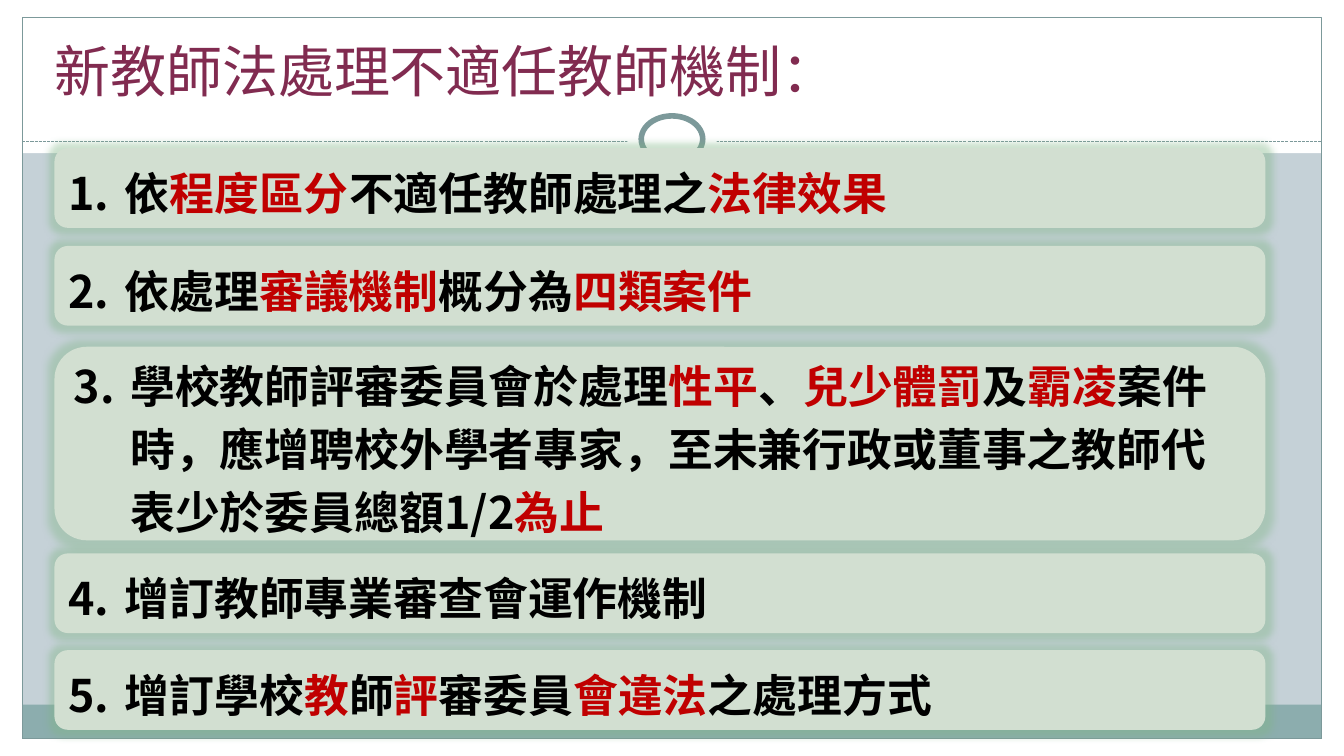
from dataclasses import dataclass

from lxml.etree import SubElement
from pptx import Presentation
from pptx.dml.color import RGBColor as RGB
from pptx.enum.dml import MSO_LINE as DASH
from pptx.enum.shapes import MSO_CONNECTOR as CONN, MSO_SHAPE as SHAPE
from pptx.enum.text import MSO_ANCHOR as ANCHOR, PP_ALIGN as ALIGN
from pptx.oxml.ns import qn
from pptx.util import Pt


@dataclass(frozen=True)
class Theme:
    font: str = "Noto Sans CJK SC"
    title_size: int = 40
    item_size: int = 32
    item_spacing: int = 45
    background: str = "C5D1D7"
    white: str = "FFFFFF"
    footer: str = "8CADAE"
    line: str = "7C999A"
    title: str = "812B50"
    card: str = "D2DFD1"
    glow: str = "7FB585"
    text: str = "000000"
    accent: str = "C00000"


THEME = Theme()
PX = 9144  # 100 px to the inch
WIDTH, HEIGHT = 1333, 750
MARGIN = 22
INDENT = 56

TITLE = "新教師法處理不適任教師機制："

# Top, height and wording of each card; words between asterisks are accented
CARDS = [
    (147, 79, "依*程度區分*不適任教師處理之*法律效果*"),
    (244, 79, "依處理*審議機制*概分為*四類案件*"),
    (344, 192, "學校教師評審委員會於處理*性平*、*兒少體罰*及*霸凌*案件時，"
               "應增聘校外學者專家，至未兼行政或董事之教師代表少於委員總額1/2*為止*"),
    (549, 79, "增訂教師專業審查會運作機制"),
    (645, 79, "增訂學校*教*師*評*審委員*會違法*之處理方式"),
]


def emu(*lengths):
    return [n * PX for n in lengths]


def add_panel(slide, kind, box, fill=None, line=None, weight=0.75):
    sp = slide.shapes.add_shape(kind, *emu(*box))
    sp.shadow.inherit = False
    if fill:
        sp.fill.solid()
        sp.fill.fore_color.rgb = RGB.from_string(fill)
    else:
        sp.fill.background()
    if line:
        sp.line.color.rgb = RGB.from_string(line)
        sp.line.width = Pt(weight)
    else:
        sp.line.fill.background()
    return sp


def set_font(p, size, bold=False):
    """Sets the paragraph font for Latin and East Asian text."""
    p.font.name = THEME.font
    p.font.size = Pt(size)
    p.font.bold = bold
    props = p._p.pPr.find(qn("a:defRPr"))
    SubElement(props, qn("a:ea")).set("typeface", THEME.font)


def set_number(p, number):
    """Gives the paragraph a hanging automatic number."""
    props = p._p.pPr
    props.set("marL", str(INDENT * PX))
    props.set("indent", str(-INDENT * PX))
    bullet = SubElement(props, qn("a:buAutoNum"))
    bullet.set("type", "arabicPeriod")
    bullet.set("startAt", str(number))
    props.find(qn("a:defRPr")).addprevious(bullet)


def add_glow(sp):
    effects = next(sp._element.iter(qn("a:effectLst")))
    glow = SubElement(effects, qn("a:glow"))
    glow.set("rad", str(Pt(10)))
    color = SubElement(glow, qn("a:srgbClr"))
    color.set("val", THEME.glow)
    SubElement(color, qn("a:alpha")).set("val", "40000")


def add_frame(slide, box):
    x, y, w, h = box
    right, bottom = x + w, y + h
    # White margins and header
    for margin in [
        (0, bottom, WIDTH, HEIGHT - bottom),
        (0, 0, WIDTH, 152),
        (0, 0, x, HEIGHT),
        (right, 0, WIDTH - right, HEIGHT),
    ]:
        add_panel(slide, SHAPE.RECTANGLE, margin, THEME.white)
    # Footer band and outline
    add_panel(slide, SHAPE.RECTANGLE, (x, bottom - 34, w, 34), THEME.footer)
    add_panel(slide, SHAPE.RECTANGLE, box, line=THEME.line)
    # Dashed divider
    rule_y = y + 123
    rule = slide.shapes.add_connector(
        CONN.STRAIGHT, *emu(x, rule_y, right, rule_y))
    rule.line.color.rgb = RGB.from_string(THEME.line)
    rule.line.width = Pt(0.75)
    rule.line.dash_style = DASH.SQUARE_DOT
    SubElement(rule._element.spPr, qn("a:effectLst"))
    # Ring on the divider
    left = x + w // 2 - 44
    add_panel(slide, SHAPE.OVAL, (left, y + 88, 89, 67), THEME.white)
    add_panel(slide, SHAPE.OVAL, (left + 14, y + 98, 61, 46),
              THEME.white, THEME.line, 4)


def add_title(slide, box):
    tf = slide.shapes.add_textbox(*emu(*box)).text_frame
    tf.word_wrap = True
    tf.vertical_anchor = ANCHOR.BOTTOM
    p = tf.paragraphs[0]
    p.text = TITLE
    p.font.color.rgb = RGB.from_string(THEME.title)
    set_font(p, THEME.title_size)


def add_card(slide, box, number, wording):
    sp = add_panel(slide, SHAPE.ROUNDED_RECTANGLE, box, THEME.card)
    add_glow(sp)
    tf = sp.text_frame
    tf.word_wrap = True
    tf.vertical_anchor = ANCHOR.MIDDLE
    p = tf.paragraphs[0]
    p.alignment = ALIGN.LEFT
    p.line_spacing = Pt(THEME.item_spacing)
    set_font(p, THEME.item_size, bold=True)
    set_number(p, number)
    for i, part in enumerate(wording.split("*")):
        if part:
            r = p.add_run()
            r.text = part
            r.font.color.rgb = RGB.from_string(
                THEME.accent if i % 2 else THEME.text)


def build_slide(prs):
    slide = prs.slides.add_slide(prs.slide_layouts[6])
    slide.background.fill.solid()
    slide.background.fill.fore_color.rgb = RGB.from_string(THEME.background)
    add_frame(slide, (MARGIN, 17, WIDTH - 2 * MARGIN, 716))
    add_title(slide, (44, 25, 1244, 83))
    for number, (top, height, wording) in enumerate(CARDS, 1):
        add_card(slide, (54, top, 1201, height), number, wording)


def main():
    prs = Presentation()
    prs.slide_width, prs.slide_height = emu(WIDTH, HEIGHT)
    build_slide(prs)
    prs.save("out.pptx")


if __name__ == "__main__":
    main()
